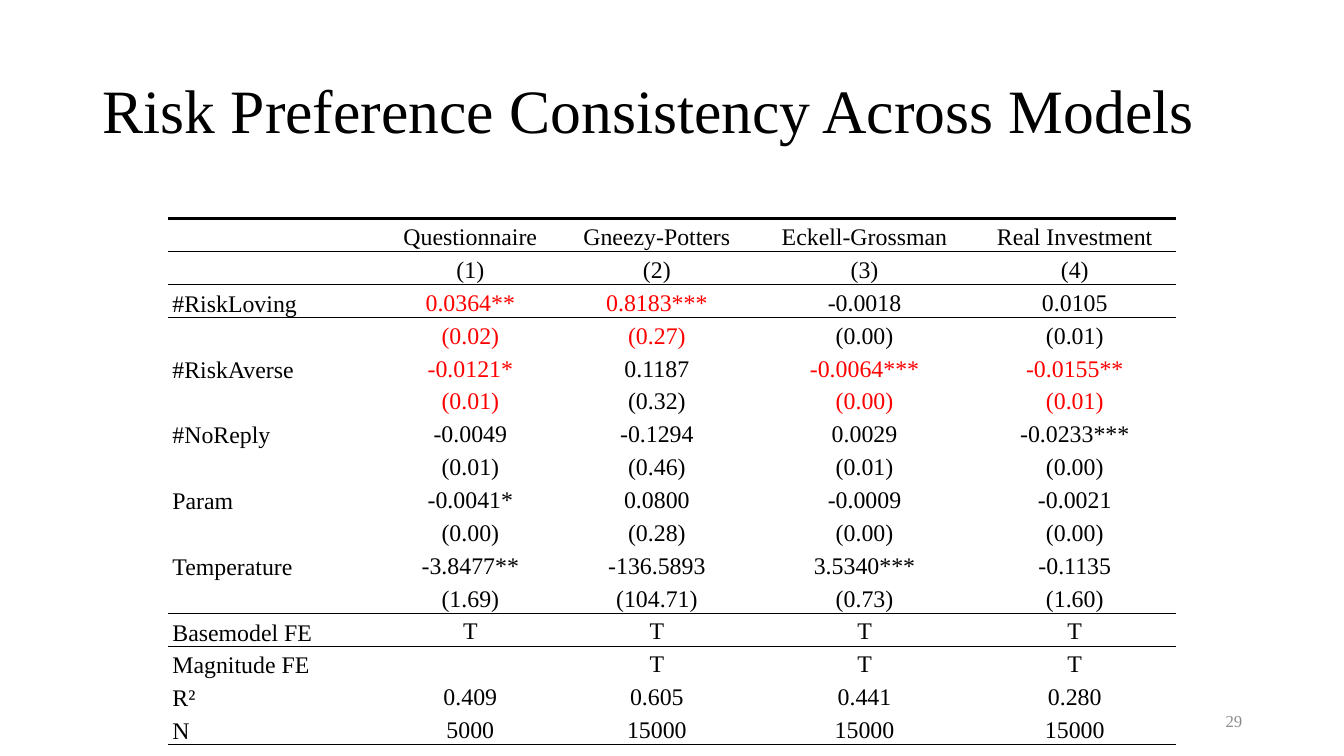
from lxml import etree
from pptx import Presentation
from pptx.dml.color import RGBColor
from pptx.enum.text import MSO_ANCHOR, PP_ALIGN
from pptx.oxml.ns import qn
from pptx.util import Inches, Pt

LEFT, CENTER, RIGHT = PP_ALIGN.LEFT, PP_ALIGN.CENTER, PP_ALIGN.RIGHT
MIDDLE, BOTTOM = MSO_ANCHOR.MIDDLE, MSO_ANCHOR.BOTTOM

FONT = "Times New Roman"
COLORS = {"ink": "000000", "highlight": "FF0000", "muted": "8C8C8C", "paper": "FFFFFF"}
PLAIN_STYLE = "{2D5ABB26-0587-4C30-8999-92F81FD0307C}"
TABLE_SIZE = 17

COLUMN_WIDTHS = [2.12, 1.75, 1.95, 2.17, 2]
HEAD_HEIGHTS = [0.32, 0.31, 0.33]
BODY_HEIGHT = 0.3
RULES_BELOW = {0: 2.25, 1: 1, 2: 1, 12: 1, 16: 1}
HIGHLIGHTED_COLUMNS = {3: (1, 2), 4: (1, 2), 5: (1, 3, 4), 6: (1, 3, 4)}
RESULTS = [
    ["", "", "", "", ""],
    ["", "Questionnaire", "Gneezy-Potters", "Eckell-Grossman", "Real Investment"],
    ["", "(1)", "(2)", "(3)", "(4)"],
    ["#RiskLoving", "0.0364**", "0.8183***", "-0.0018", "0.0105"],
    ["", "(0.02)", "(0.27)", "(0.00)", "(0.01)"],
    ["#RiskAverse", "-0.0121*", "0.1187", "-0.0064***", "-0.0155**"],
    ["", "(0.01)", "(0.32)", "(0.00)", "(0.01)"],
    ["#NoReply", "-0.0049", "-0.1294", "0.0029", "-0.0233***"],
    ["", "(0.01)", "(0.46)", "(0.01)", "(0.00)"],
    ["Param", "-0.0041*", "0.0800", "-0.0009", "-0.0021"],
    ["", "(0.00)", "(0.28)", "(0.00)", "(0.00)"],
    ["Temperature", "-3.8477**", "-136.5893", "3.5340***", "-0.1135"],
    ["", "(1.69)", "(104.71)", "(0.73)", "(1.60)"],
    ["Basemodel FE", "T", "T", "T", "T"],
    ["Magnitude FE", "", "T", "T", "T"],
    ["R²", "0.409", "0.605", "0.441", "0.280"],
    ["N", "5000", "15000", "15000", "15000"],
]


def write_text(frame, text, size, color="ink", align=LEFT, spacing=1.0):
    para = frame.paragraphs[0]
    para.alignment = align
    para.line_spacing = spacing
    if text:
        span = para.add_run()
        span.text = text
        span.font.name = FONT
        span.font.size = Pt(size)
        span.font.color.rgb = RGBColor.from_string(COLORS[color])
    else:
        ending = etree.SubElement(para._p, qn("a:endParaRPr"), sz=str(size * 100))
        etree.SubElement(ending, qn("a:latin"), typeface=FONT)


def add_text_box(page, area, text, **text_format):
    box = page.shapes.add_textbox(*(Inches(length) for length in area))
    box.text_frame.word_wrap = True
    box.text_frame.vertical_anchor = MIDDLE
    write_text(box.text_frame, text, **text_format)


def draw_rule(cell, tag, points):
    rule = etree.Element(qn(tag), w=str(Pt(points)))
    fill = etree.SubElement(rule, qn("a:solidFill"))
    etree.SubElement(fill, qn("a:srgbClr"), val=COLORS["ink"])
    cell._tc.get_or_add_tcPr().insert(0, rule)


def fill_cell(cell, text, row, column):
    is_label = column == 0
    cell.margin_left = cell.margin_right = Inches(0.04)
    cell.margin_top = cell.margin_bottom = 0
    cell.vertical_anchor = BOTTOM if is_label else MIDDLE
    cell.fill.solid()
    cell.fill.fore_color.rgb = RGBColor.from_string(COLORS["paper"])
    highlighted = column in HIGHLIGHTED_COLUMNS.get(row, ())
    write_text(cell.text_frame, text, size=TABLE_SIZE, spacing=1.15,
               color="highlight" if highlighted else "ink",
               align=LEFT if is_label else CENTER)
    for tag, rule_row in (("a:lnB", row), ("a:lnT", row - 1)):
        if rule_row in RULES_BELOW:
            draw_rule(cell, tag, RULES_BELOW[rule_row])


def add_results_table(page, area):
    table = page.shapes.add_table(len(RESULTS), len(COLUMN_WIDTHS),
                                  *(Inches(length) for length in area)).table
    table.first_row = table.horz_banding = False
    table._tbl.tblPr.find(qn("a:tableStyleId")).text = PLAIN_STYLE
    for column, width in zip(table.columns, COLUMN_WIDTHS):
        column.width = Inches(width)
    for row, texts in enumerate(RESULTS):
        height = HEAD_HEIGHTS[row] if row < len(HEAD_HEIGHTS) else BODY_HEIGHT
        table.rows[row].height = Inches(height)
        for column, text in enumerate(texts):
            fill_cell(table.cell(row, column), text, row, column)


def main():
    deck = Presentation()
    deck.slide_width, deck.slide_height = Inches(13.33), Inches(7.5)
    page = deck.slides.add_slide(deck.slide_layouts[6])
    add_text_box(page, (0.92, 0.4, 11.5, 1.45),
                 "Risk Preference Consistency Across Models", size=44, spacing=0.9)
    add_text_box(page, (9.42, 6.95, 3, 0.4), "29", size=12, color="muted", align=RIGHT)
    add_results_table(page, (1.67, 1.85, 9.98, 5.1))
    deck.save("out.pptx")


if __name__ == "__main__":
    main()
